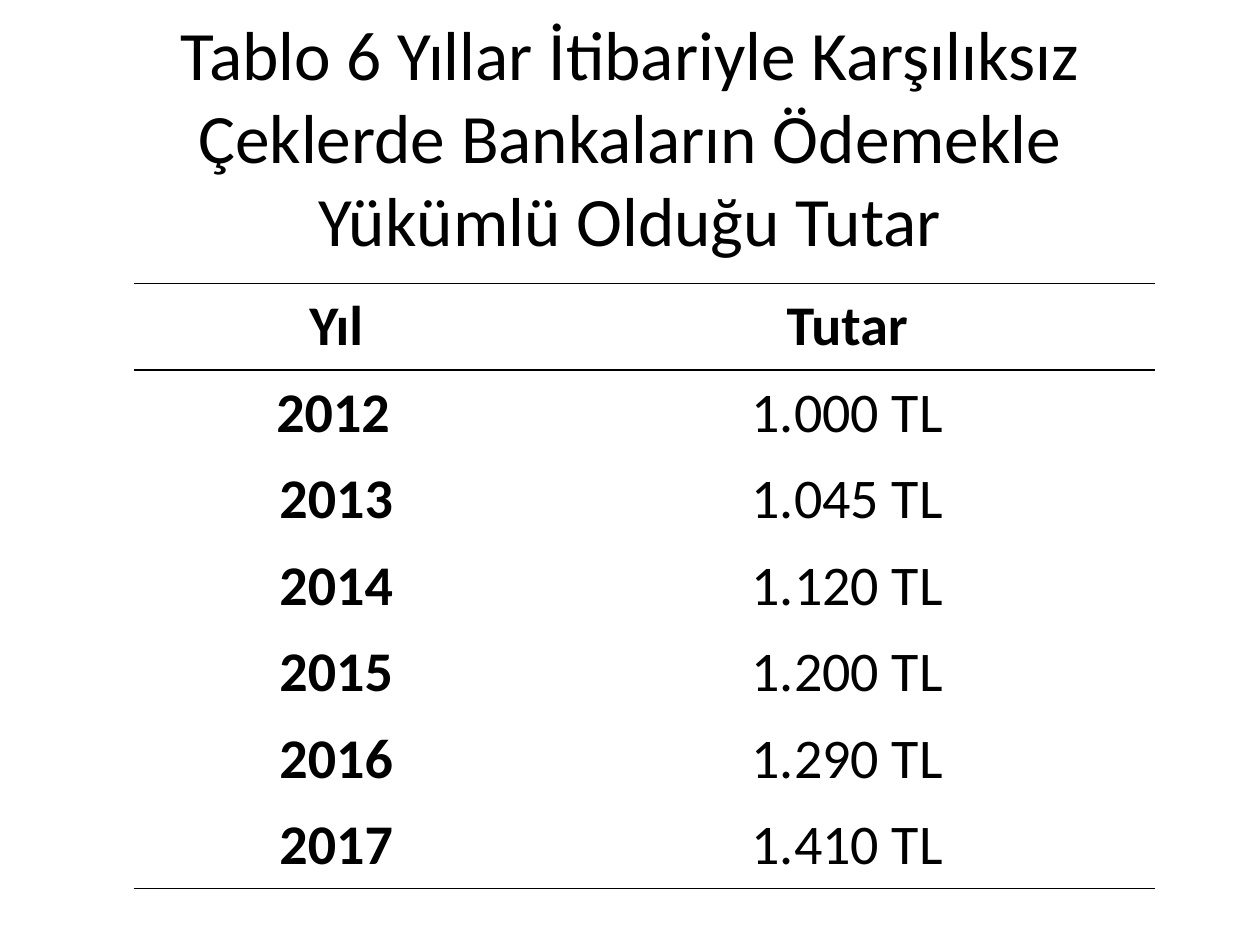
from lxml import etree
from pptx import Presentation
from pptx import util as u
from pptx.dml import color
from pptx.enum import text
from pptx.oxml import ns

COLORS = {"ink": "000000", "paper": "FFFFFF"}
FONT = "Calibri"
NO_STYLE = "{2D5ABB26-0587-4C30-8999-92F81FD0307C}"
TITLE = ("Tablo 6 Yıllar İtibariyle Karşılıksız Çeklerde Bankaların "
         "Ödemekle Yükümlü Olduğu Tutar")
AMOUNTS = [
    ("Yıl", "Tutar"),
    ("2012", "1.000 TL"),
    ("2013", "1.045 TL"),
    ("2014", "1.120 TL"),
    ("2015", "1.200 TL"),
    ("2016", "1.290 TL"),
    ("2017", "1.410 TL"),
]


def write(frame, words, size, bold=False, indent=0):
    """Write one centred paragraph; indent is its first-line indent in points."""
    para = frame.paragraphs[0]
    para.alignment = text.PP_ALIGN.CENTER
    if indent:
        para._p.get_or_add_pPr().set("indent", str(u.Pt(indent)))
    span = para.add_run()
    span.text = words
    span.font.name = FONT
    span.font.size = u.Pt(size)
    span.font.bold = bold
    span.font.color.rgb = color.RGBColor.from_string(COLORS["ink"])


def add_title(page, left, top, width, height):
    box = page.shapes.add_textbox(*map(u.Pt, (left, top, width, height)))
    frame = box.text_frame
    frame.word_wrap = True
    frame.vertical_anchor = text.MSO_ANCHOR.MIDDLE
    write(frame, TITLE, size=39.6)


def set_rules(cell, ruled_sides):
    """Draw a thin line on the named sides (T, B) and none on the others."""
    props = cell._tc.get_or_add_tcPr()
    for side in "LRTB":
        line = etree.SubElement(props, ns.qn(f"a:ln{side}"), w=str(u.Pt(1)))
        if side in ruled_sides:
            fill = etree.SubElement(line, ns.qn("a:solidFill"))
            etree.SubElement(fill, ns.qn("a:srgbClr"), val=COLORS["ink"])
        else:
            etree.SubElement(line, ns.qn("a:noFill"))


def add_amounts(page, left, top, width, height):
    last = len(AMOUNTS) - 1
    holder = page.shapes.add_table(len(AMOUNTS), 2,
                                   *map(u.Pt, (left, top, width, height)))
    table = holder.table
    table.first_row = table.horz_banding = False
    table._tbl.tblPr.find(ns.qn("a:tableStyleId")).text = NO_STYLE
    year_width = 211.7
    table.columns[0].width = u.Pt(year_width)
    table.columns[1].width = u.Pt(width - year_width)
    rules = {0: "TB", 1: "T", last: "B"}

    for row, values in enumerate(AMOUNTS):
        table.rows[row].height = u.Pt(height / len(AMOUNTS))
        for column, value in enumerate(values):
            cell = table.cell(row, column)
            cell.margin_left = cell.margin_right = u.Pt(5)
            cell.margin_top = cell.margin_bottom = 0
            cell.vertical_anchor = text.MSO_ANCHOR.MIDDLE
            set_rules(cell, rules.get(row, ""))
            cell.fill.background()
            write(cell.text_frame, value, size=32,
                  bold=row == 0 or column == 0,
                  indent=16.5 if (row, column) == (1, 0) else 20)


def main():
    deck = Presentation()
    deck.slide_width, deck.slide_height = u.Pt(720), u.Pt(540)
    page = deck.slides.add_slide(deck.slide_layouts[6])
    page.background.fill.solid()
    page.background.fill.fore_color.rgb = color.RGBColor.from_string(COLORS["paper"])
    add_title(page, 36, 21.6, 648, 112.3)
    add_amounts(page, 76.3, 162, 584, 346)
    deck.save("out.pptx")


if __name__ == "__main__":
    main()
